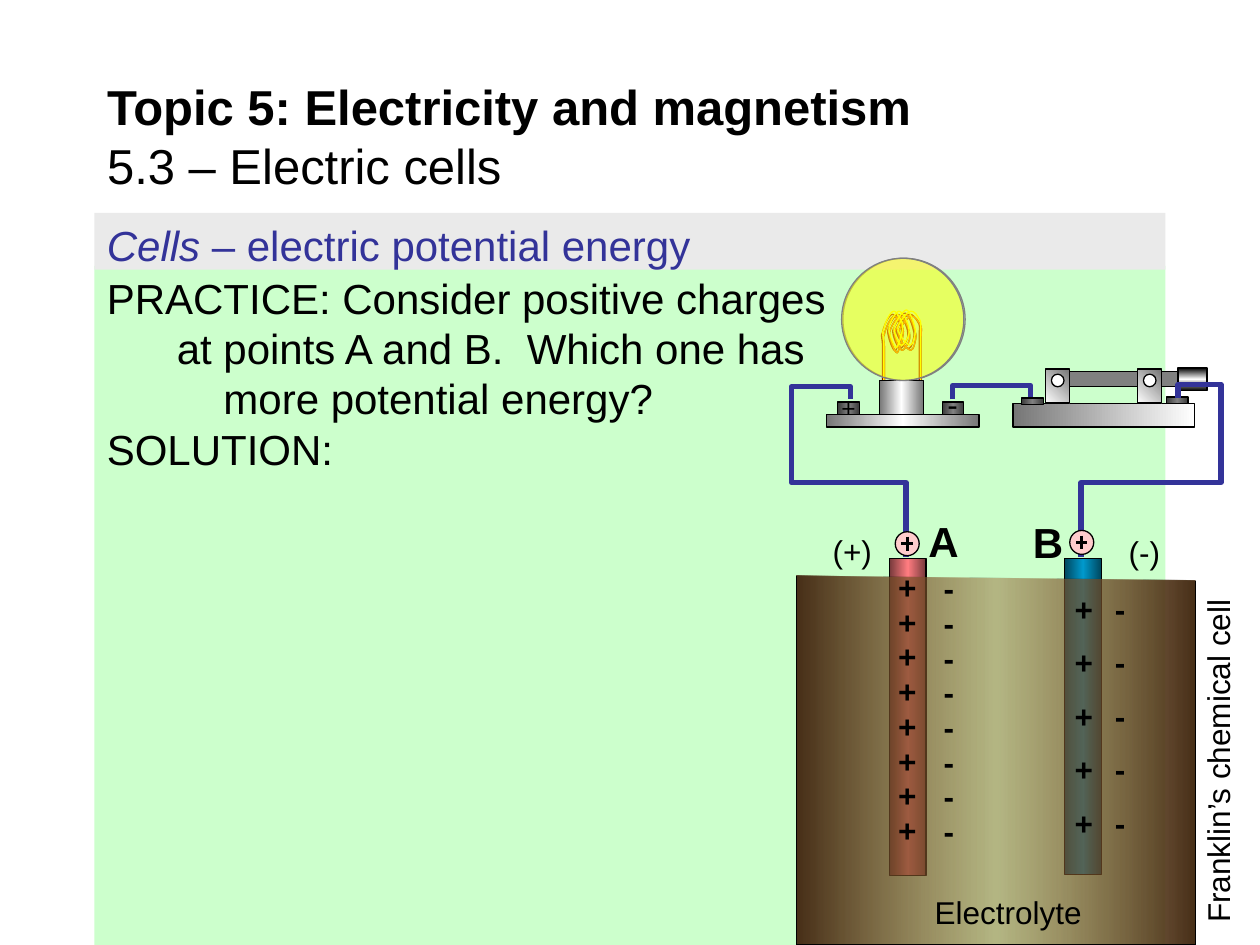
import copy
import pptx
import pptx.util
import pptx.dml.color
import pptx.enum.shapes
import pptx.enum.text
import pptx.oxml
import pptx.oxml.ns

HUE = {"black": "000000", "white": "FFFFFF", "mint": "CCFFCC", "pale": "EAEAEA",
       "navy": "333399", "gray": "808080", "dim": "3B3B3B", "steel": "767676",
       "red": "990000", "flame": "FF6600", "glow": "FFFF00", "pink": "FFCCCC",
       "rose": "FF7C80", "wine": "76393B", "blue": "0099CC", "teal": "00475E",
       "mud": "472F18", "tan": "996633"}
KIND = pptx.enum.shapes.MSO_SHAPE
RECT, OVAL = KIND.RECTANGLE, KIND.OVAL
ALIGN = pptx.enum.text.PP_ALIGN
ANCHOR = pptx.enum.text.MSO_ANCHOR
NS = pptx.oxml.ns.nsdecls("a")
qn = pptx.oxml.ns.qn

deck = pptx.Presentation()
deck.slide_width, deck.slide_height = pptx.util.Inches(10), pptx.util.Inches(7.5)
CELL = deck.slide_width // 100  # grid of 100 columns by 75 rows
slide = deck.slides.add_slide(deck.slide_layouts[5])
made = slide.shapes


def paint(shape, fill=None, line=None, width=0.75, turn=0):
    """Fill is None, a colour name, (name, opacity) or a list of gradient stops."""
    shape.shadow.inherit = False
    if isinstance(fill, list):
        stops = "".join(
            f'<a:gs pos="{pos * 1000}"><a:srgbClr val="{HUE[name]}">'
            f'<a:alpha val="{clear * 1000}"/></a:srgbClr></a:gs>'
            for pos, name, clear in fill)
        shape.fill.background()
        props = shape._element.spPr
        props.replace(props.find(qn("a:noFill")), pptx.oxml.parse_xml(
            f'<a:gradFill {NS} rotWithShape="1"><a:gsLst>{stops}</a:gsLst>'
            f'<a:lin ang="{turn * 60000}" scaled="0"/></a:gradFill>'))
    elif fill:
        name, clear = fill if isinstance(fill, tuple) else (fill, 100)
        shape.fill.solid()
        shape.fill.fore_color.rgb = pptx.dml.color.RGBColor.from_string(HUE[name])
        if clear < 100:
            tint = shape._element.spPr.find(".//" + qn("a:srgbClr"))
            tint.append(pptx.oxml.parse_xml(f'<a:alpha {NS} val="{clear * 1000}"/>'))
    else:
        shape.fill.background()
    if line:
        shape.line.color.rgb = pptx.dml.color.RGBColor.from_string(HUE[line])
        shape.line.width = pptx.util.Pt(width)
    else:
        shape.line.fill.background()


def write(shape, text, size, bold=False, wrap=False, hue="black", gap=0,
          lead=None, align=ALIGN.LEFT, anchor=ANCHOR.TOP):
    frame = shape.text_frame
    frame.text = text
    frame.word_wrap = wrap
    frame.vertical_anchor = anchor
    frame.auto_size = pptx.enum.text.MSO_AUTO_SIZE.NONE
    for para in frame.paragraphs:
        para.alignment = align
        para.space_before = pptx.util.Pt(gap)
        if lead:
            para.line_spacing = lead
        for run in para.runs:
            run.font.name = "Arial"
            run.font.size = pptx.util.Pt(size)
            run.font.bold = bold
            run.font.color.rgb = pptx.dml.color.RGBColor.from_string(HUE[hue])
    return frame


# Title
head = made.title
head.left, head.top, head.width, head.height = [int(n * CELL) for n in (7.5, 5.85, 85, 9.8)]
frame = write(head, "Topic 5: Electricity and magnetism\v5.3 – Electric cells", 28,
              wrap=True, anchor=ANCHOR.MIDDLE)
frame.paragraphs[0].runs[0].font.bold = True

# Question panel, with tab stops for its stepped lines
panel = made.add_shape(RECT, *[int(n * CELL) for n in (7.5, 21.1, 85, 53.9)])
paint(panel, "mint")
frame = write(panel, "PRACTICE: Consider positive charges\v\tat points A and B.  Which one has\v"
              "\t\tmore potential energy?\nSOLUTION:", 24, wrap=True)
tabs = "".join(f'<a:tab pos="{int(n * CELL)}" algn="l"/>' for n in (5.55, 9.25))
frame.paragraphs[0]._p.get_or_add_pPr().append(
    pptx.oxml.parse_xml(f"<a:tabLst {NS}>{tabs}</a:tabLst>"))

# Heading band
band = made.add_shape(RECT, *[int(n * CELL) for n in (7.5, 16.9, 85, 4.5)])
paint(band, "pale")
frame = write(band, "Cells", 24, wrap=True, hue="navy", gap=4.8)
first = frame.paragraphs[0].runs[0]
rest = frame.paragraphs[0].add_run()
rest.text = " – electric potential energy"
rest._r.insert(0, copy.deepcopy(first._r.rPr))
first.font.italic = True

# Filament: one Bezier chain, drawn four times with small shifts
knots = [(70.2, 32.7), (70.2, 30.8), (70.2, 28.8), (70.2, 27.8), (70.2, 26.8), (70, 26.9),
         (70.2, 26.5), (70.3, 26), (70.7, 25.1), (71, 25.1), (71.2, 25.1), (71.7, 25.9),
         (71.7, 26.3), (71.7, 26.8), (71.3, 28), (71.2, 28), (71, 28), (70.6, 26.9),
         (70.6, 26.4), (70.7, 25.9), (71.2, 25.1), (71.4, 25.1), (71.7, 25.1), (72.2, 26.1),
         (72.2, 26.6), (72.3, 27), (71.8, 27.8), (71.6, 27.8), (71.4, 27.8), (71, 26.9),
         (71, 26.4), (71.1, 26), (71.7, 25), (72, 25), (72.3, 25.1), (72.6, 26.1),
         (72.7, 26.6), (72.7, 27), (72.5, 27.8), (72.3, 27.8), (72, 27.8), (71.3, 26.9),
         (71.3, 26.4), (71.4, 26), (72, 25.2), (72.3, 25.1), (72.6, 25), (72.9, 25.5),
         (73.1, 25.9), (73.2, 26.2), (73.1, 25.9), (73.1, 27.1), (73.1, 28.3),
         (73.1, 30.6), (73.1, 32.9)]
back_paths = [([(x + dx, y + dy) for x, y in knots], None, hue, 0.75, True)
              for hue, dx, dy in (("black", 0, 0), ("red", -0.15, -0.15),
                                  ("flame", 0, 0), ("glow", -0.05, -0.4))]
back_paths.append(([(63.2, 45.7), (63.2, 75), (94.9, 75), (94.9, 46.1)],
                   [(0, "mud", 100), (50, "tan", 47), (100, "mud", 100)],
                   "black", 0.75, False))
wires = [[(71.9, 44.2), (71.9, 38.3), (62.8, 38.3), (62.8, 30.7), (67.5, 30.7), (67.5, 31.7)],
         [(75.6, 31.7), (75.6, 30.6), (81.8, 30.6), (81.8, 31.5)],
         [(93.5, 31.6), (93.5, 30.5), (96.9, 30.5), (96.9, 38.3), (85.8, 38.3), (85.8, 44.2)]]

# Gradients shared by the metal parts
shaft, post, rod, bar, base, clip, knob = [
    [(pos, name, 100) for pos, name in zip((0, 50, 100) if len(names) == 3 else (0, 100), names)]
    for names in (("steel", "white", "steel"), ("dim", "gray", "dim"), ("wine", "rose", "wine"),
                  ("teal", "blue", "teal"), ("steel", "white"), ("white", "steel"),
                  ("black", "white", "black"))]

# Layers from back to front: boxes, then the lines above them
back = [(RECT, (83.3, 29.5, 12.4, 1.2), "gray", "black", 0),
        (RECT, (93.5, 29.2, 2.3, 1.8), knob, "black", 90),
        (OVAL, (66.9, 20.5, 9.7, 9.7), None, "gray", 0),
        (RECT, (70.6, 44.3, 2.9, 25.2), rod, "black", 0),
        (RECT, (84.5, 44.3, 2.9, 25.1), bar, "black", 0)]
front = [(RECT, (65.6, 32.9, 12.1, 1), shaft, "black", 0),
         (RECT, (69.8, 30.2, 3.5, 2.7), shaft, "black", 0)]
front += [(RECT, (x, 31.9, 1.7, 1), post, "black", 0) for x in (66.5, 74.8)]
front += [(RECT, (80.4, 32, 14.4, 1.9), base, "black", 0)]
front += [(RECT, (x, y, 1.7, 0.5), post, "black", 0) for x, y in ((81.1, 31.6), (92.6, 31.5))]
for x in (83, 90.3):
    front += [(RECT, (x, 29.3, 1.9, 2.7), clip, "black", 315),
              (OVAL, (x + 0.45, 29.7, 1, 1), "white", "black", 0)]
front += [(OVAL, (66.8, 20.5, 9.7, 9.7), ("glow", 52), "gray", 0)]
spots = ((72, 43.15), (85.85, 43.05))  # centres of the two charges
dots = [(OVAL, (x - 0.95, y - 0.95, 1.9, 1.9), "pink", "black", 0) for x, y in spots]
for boxes, paths in ((back, back_paths), (front, [(w, None, "navy", 3, False) for w in wires]),
                     (dots, [])):
    for kind, spot, fill, line, turn in boxes:
        paint(made.add_shape(kind, *[int(n * CELL) for n in spot]), fill, line, turn=turn)
    for points, fill, line, width, curved in paths:
        trail = [(x * CELL, y * CELL) for x, y in points]
        pen = made.build_freeform(*trail[0])
        pen.add_line_segments(trail[1:], close=False)
        shape = pen.convert_to_shape()
        paint(shape, fill, line, width)
        if curved:  # each three points become one Bezier segment
            legs = shape._element.findall(".//" + qn("a:lnTo"))
            for k in range(0, len(legs), 3):
                bend = pptx.oxml.parse_xml(f"<a:cubicBezTo {NS}/>")
                legs[k].addprevious(bend)
                for leg in legs[k:k + 3]:
                    bend.append(leg[0])
                    leg.getparent().remove(leg)

# Plus signs on the charges
for x, y in spots:
    for dx, dy in ((0.45, 0), (0, 0.55)):
        ends = [int(n * CELL) for n in (x - dx, y - dy, x + dx, y + dy)]
        stroke = made.add_connector(pptx.enum.shapes.MSO_CONNECTOR.STRAIGHT, *ends)
        stroke.line.color.rgb = pptx.dml.color.RGBColor.from_string(HUE["black"])
        stroke.line.width = pptx.util.Pt(1.5)
        stroke._element.spPr.append(pptx.oxml.parse_xml(f"<a:effectLst {NS}/>"))

# Columns of ions
for sign, count, x, y, high, lead in (("-", 5, 87.5, 46.3, 22.1, None),
                                      ("-", 8, 73.9, 46, 23.7, 0.5),
                                      ("+", 8, 70.3, 45.9, 23.7, 0.5),
                                      ("+", 5, 84.3, 46.3, 22.1, None)):
    box = made.add_textbox(*[int(n * CELL) for n in (x, y, 3.1, high)])
    write(box, "\n".join([sign] * count), 18, True, True, gap=9, lead=lead)

# Labels
for text, spot, size, bold in (("Electrolyte", (73.2, 70.4, 13.7, 4), 18, False),
                               ("-", (74.2, 30.1, 2.8, 4), 18, False),
                               ("+", (65.8, 30.7, 3.1, 3.3), 14, False),
                               ("A", (72.7, 40.4, 3.7, 4.3), 24, True),
                               ("B", (81, 40.5, 3.7, 4.3), 24, True),
                               ("(+)", (65.1, 41.7, 5.2, 4), 18, False),
                               ("(-)", (88.6, 41.8, 4.5, 4), 18, False)):
    write(made.add_textbox(*[int(n * CELL) for n in spot]), text, size, bold)
side = made.add_textbox(*[int(n * CELL) for n in (82, 58.4, 29.3, 4)])
side.rotation = 270
write(side, "Franklin’s chemical cell", 18, wrap=True, align=ALIGN.CENTER)

deck.save("out.pptx")
